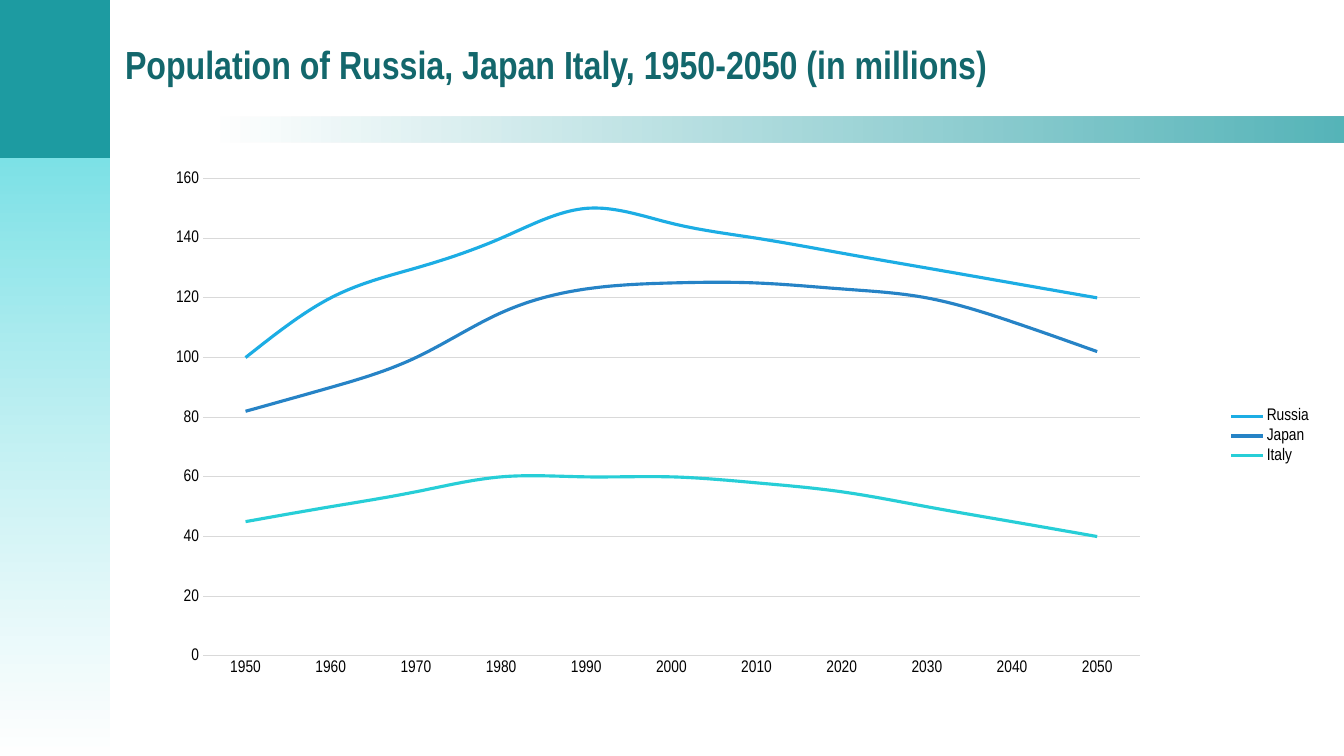
from dataclasses import dataclass

from lxml import etree
from pptx import Presentation
from pptx import util as u
from pptx.chart import data as chart_data
from pptx.dml import color
from pptx.enum import chart as chart_enum
from pptx.enum import shapes, text
from pptx.oxml import ns


@dataclass(frozen=True)
class Theme:
    font: str = "Arial Narrow"
    title_size: int = 28
    label_size: int = 12
    grid_width: float = 0.75
    series_width: float = 2.25
    title: str = "13676C"
    teal: str = "1D9BA1"
    aqua: str = "7DE2E7"
    white: str = "FFFFFF"
    black: str = "000000"
    grid: str = "D9D9D9"


@dataclass(frozen=True)
class Box:
    left: float
    top: float
    width: float
    height: float

    def lengths(self) -> tuple:
        return tuple(map(u.Inches, (self.left, self.top, self.width, self.height)))


@dataclass(frozen=True)
class Stop:
    colour: str
    opacity: int = 100


@dataclass(frozen=True)
class Band:
    box: Box
    stops: tuple[Stop, ...]
    angle: int = 0


@dataclass(frozen=True)
class Country:
    name: str
    colour: str
    population: tuple[int, ...]


THEME = Theme()
TITLE_BOX = Box(1.14, 0.11, 11.97, 1.04)
CHART_BOX = Box(1.1, 1.43, 12.02, 5.79)
PLOT = {"x": 0.076, "y": 0.059, "w": 0.773, "h": 0.818}
BANDS = (
    Band(Box(-0.02, -0.01, 1.11, 1.58), (Stop(THEME.teal),)),
    Band(Box(-0.02, 1.57, 1.11, 5.93), (Stop(THEME.aqua), Stop(THEME.white, 75)), 270),
    Band(Box(2.09, 1.16, 11.25, 0.25), (Stop(THEME.white, 75), Stop(THEME.teal, 75))),
)
COUNTRIES = (
    Country("Russia", "1CADE4", (100, 120, 130, 140, 150, 145, 140, 135, 130, 125, 120)),
    Country("Japan", "2683C6", (82, 90, 100, 115, 123, 125, 125, 123, 120, 112, 102)),
    Country("Italy", "27CED7", (45, 50, 55, 60, 60, 60, 58, 55, 50, 45, 40)),
)


def rgb(value: str) -> color.RGBColor:
    return color.RGBColor.from_string(value)


def style_font(font, size: int, colour: str, bold: bool = False) -> None:
    font.name = THEME.font
    font.size = u.Pt(size)
    font.bold = bold
    font.color.rgb = rgb(colour)


def style_line(line, colour: str, width: float) -> None:
    line.color.rgb = rgb(colour)
    line.width = u.Pt(width)


def draw_band(slide, band: Band) -> None:
    shape = slide.shapes.add_shape(shapes.MSO_SHAPE.RECTANGLE, *band.box.lengths())
    shape.shadow.inherit = False
    shape.line.fill.background()
    if len(band.stops) == 1:
        shape.fill.solid()
        shape.fill.fore_color.rgb = rgb(band.stops[0].colour)
        return
    shape.fill.gradient()
    shape.fill.gradient_angle = band.angle
    for gradient_stop, stop in zip(shape.fill.gradient_stops, band.stops):
        gradient_stop.color.rgb = rgb(stop.colour)
    colours = shape.element.spPr.iter(ns.qn("a:srgbClr"))
    for element, stop in zip(list(colours), band.stops):
        if stop.opacity < 100:
            etree.SubElement(element, ns.qn("a:alpha"), val=str(stop.opacity * 1000))


def draw_title(slide, title: str) -> None:
    shape = slide.shapes.title
    shape.left, shape.top, shape.width, shape.height = TITLE_BOX.lengths()
    frame = shape.text_frame
    frame.text = title
    frame.word_wrap = True
    frame.auto_size = text.MSO_AUTO_SIZE.NONE
    frame.vertical_anchor = text.MSO_ANCHOR.MIDDLE
    paragraph = frame.paragraphs[0]
    paragraph.alignment = text.PP_ALIGN.LEFT
    style_font(paragraph.runs[0].font, THEME.title_size, THEME.title, bold=True)


def place_plot(chart) -> None:
    plot_area = chart.element.find(".//" + ns.qn("c:plotArea"))
    for existing in plot_area.findall(ns.qn("c:layout")):
        plot_area.remove(existing)
    layout = etree.Element(ns.qn("c:layout"))
    manual = etree.SubElement(layout, ns.qn("c:manualLayout"))
    settings = {"layoutTarget": "inner", "xMode": "edge", "yMode": "edge", **PLOT}
    for tag, value in settings.items():
        etree.SubElement(manual, ns.qn(f"c:{tag}"), val=str(value))
    plot_area.insert(0, layout)


def draw_chart(slide) -> None:
    data = chart_data.CategoryChartData()
    data.categories = [str(year) for year in range(1950, 2051, 10)]
    for country in COUNTRIES:
        data.add_series(country.name, country.population)
    chart = slide.shapes.add_chart(
        chart_enum.XL_CHART_TYPE.LINE, *CHART_BOX.lengths(), data
    ).chart
    chart.has_title = False
    style_font(chart.font, THEME.label_size, THEME.black)
    chart.has_legend = True
    chart.legend.position = chart_enum.XL_LEGEND_POSITION.RIGHT
    chart.legend.include_in_layout = False
    style_font(chart.legend.font, THEME.label_size, THEME.black)
    chart.plots[0].vary_by_categories = False
    for series, country in zip(chart.plots[0].series, COUNTRIES):
        series.smooth = True
        style_line(series.format.line, country.colour, THEME.series_width)

    years, millions = chart.category_axis, chart.value_axis
    for axis in (years, millions):
        axis.major_tick_mark = chart_enum.XL_TICK_MARK.NONE
        axis.minor_tick_mark = chart_enum.XL_TICK_MARK.NONE
        style_font(axis.tick_labels.font, THEME.label_size, THEME.black)
    style_line(years.format.line, THEME.grid, THEME.grid_width)
    millions.minimum_scale, millions.maximum_scale, millions.major_unit = 0, 160, 20
    millions.format.line.fill.background()
    millions.has_major_gridlines = True
    style_line(millions.major_gridlines.format.line, THEME.grid, THEME.grid_width)
    place_plot(chart)


def main() -> None:
    presentation = Presentation()
    presentation.slide_width = u.Inches(13.33)
    presentation.slide_height = u.Inches(7.5)
    slide = presentation.slides.add_slide(presentation.slide_layouts.get_by_name("Title Only"))
    for band in BANDS:
        draw_band(slide, band)
    draw_title(slide, "Population of Russia, Japan Italy, 1950-2050 (in millions)")
    draw_chart(slide)
    presentation.save("out.pptx")


if __name__ == "__main__":
    main()
